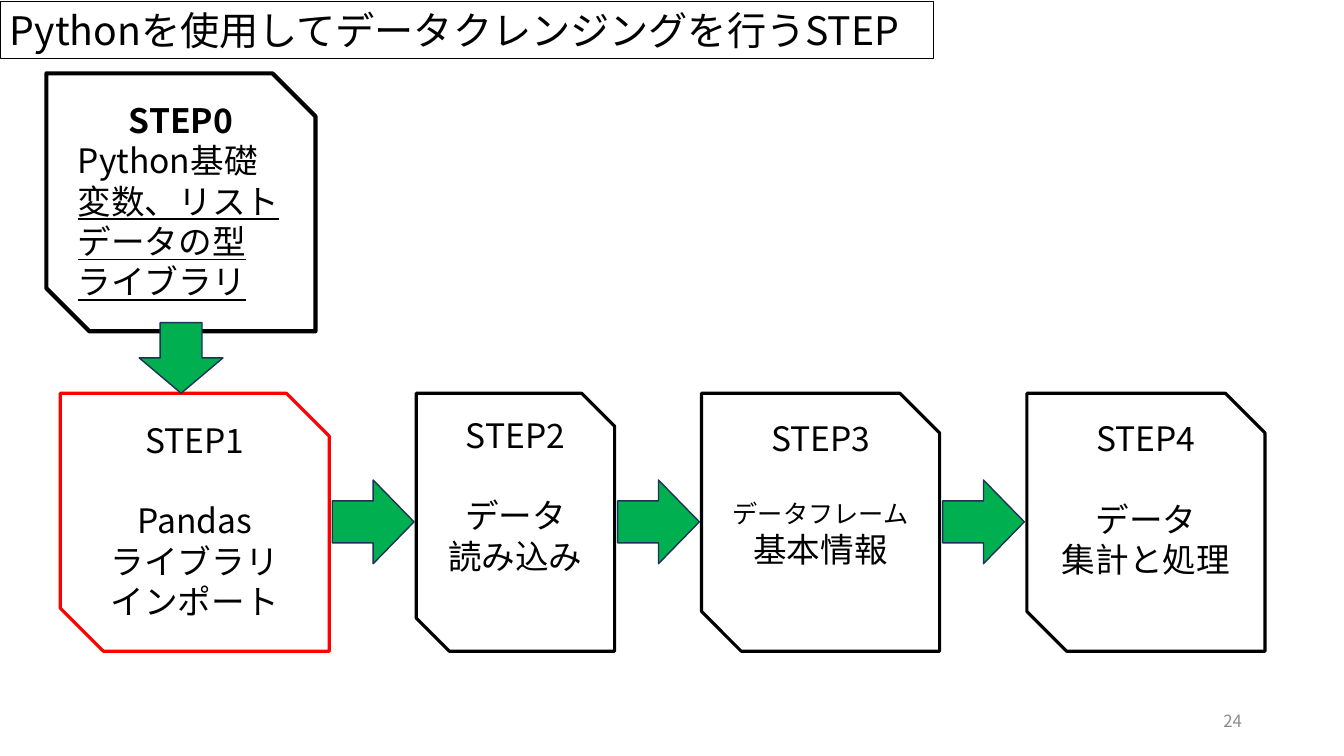
from lxml import etree
from pptx import Presentation
from pptx import util as u
from pptx.dml import color
from pptx.enum import shapes, text
from pptx.oxml import ns

ALIGN = text.PP_ALIGN
SHAPE = shapes.MSO_SHAPE


def rgb(value):
    return color.RGBColor.from_string(value)


def write(p, content, size=24, fill="000000", bold=False, underline=False, font="Noto Sans CJK JP"):
    r = p.add_run()
    r.text = content
    f = r.font
    f.name, f.size, f.bold, f.underline = font, u.Pt(size), bold, underline
    f.color.rgb = rgb(fill)
    ea = etree.SubElement(r._r.get_or_add_rPr(), ns.qn("a:ea"))
    ea.set("typeface", font)


class Deck:
    green, edge, grey = "00B050", "1E3256", "8C8C8C"

    def __init__(self):
        self.prs = Presentation()
        self.prs.slide_width = u.Cm(33.87)
        self.prs.slide_height = u.Cm(19.05)
        self.s = self.prs.slides.add_slide(self.prs.slide_layouts[6])

    def shape(self, kind, x, y, w, h, fill="FFFFFF", line="000000", weight=2.25):
        sp = self.s.shapes.add_shape(kind, u.Cm(x), u.Cm(y), u.Cm(w), u.Cm(h))
        sp.shadow.inherit = False
        sp.fill.solid()
        sp.fill.fore_color.rgb = rgb(fill)
        sp.line.color.rgb = rgb(line)
        sp.line.width = u.Pt(weight)
        tf = sp.text_frame
        tf.word_wrap = True
        tf.vertical_anchor = text.MSO_ANCHOR.TOP
        return sp

    def title(self, content):
        sp = self.shape(SHAPE.RECTANGLE, 0, 0.03, 23.52, 1.45, weight=0.5)
        p = sp.text_frame.paragraphs[0]
        p.alignment = ALIGN.JUSTIFY
        write(p, content, size=28)

    def page_number(self, content):
        sp = self.s.shapes.add_textbox(u.Cm(23.93), u.Cm(17.65), u.Cm(7.62), u.Cm(1.02))
        tf = sp.text_frame
        tf.word_wrap = True
        tf.vertical_anchor = text.MSO_ANCHOR.MIDDLE
        p = tf.paragraphs[0]
        p.alignment = ALIGN.RIGHT
        write(p, content, size=12, fill=self.grey)

    def card(self, x, y, w, heading, lines, gap=28.8, align=ALIGN.CENTER, bold=False, **style):
        sp = self.shape(SHAPE.SNIP_2_DIAG_RECTANGLE, x, y, w, 6.5, **style)
        tf = sp.text_frame
        p = tf.paragraphs[0]
        p.alignment = ALIGN.CENTER
        write(p, heading, bold=bold)
        for i, runs in enumerate(lines):
            p = tf.add_paragraph()
            p.alignment = align
            if i == 0:
                p.space_before = u.Pt(gap)
            for content, fmt in runs:
                write(p, content, **fmt)

    def arrow(self, x, y, h, rotation=0):
        sp = self.shape(SHAPE.DOWN_ARROW, x, y, 2.11, h, self.green, self.edge, 1)
        sp.rotation = rotation


def main():
    d = Deck()
    d.title("Pythonを使用してデータクレンジングを行うSTEP")
    d.page_number("24")

    row_y = 9.91
    steps = [
        (1.52, 6.78, "FF0000", [[("Pandas", {})], [("ライブラリ", {})], [("インポート", {})]]),
        (10.49, 5, "000000", [[("データ", {})], [("読み込み", {})]]),
        (17.68, 6, "000000", [[("データフレーム", {"size": 18}), ("基本情報", {})]]),
        (25.88, 6, "000000", [[("データ", {})], [("集計と処理", {})]]),
    ]
    for n, (x, w, line, lines) in enumerate(steps, 1):
        d.card(x, row_y, w, f"STEP{n}", lines, line=line)
    for x, w, *_ in steps[:-1]:
        d.arrow(x + w + 0.05, 12.12, 2.06, rotation=270)

    topics = ["変数、リスト", "データの型", "ライブラリ"]
    basics = [[("Python基礎", {})]] + [[(t, {"underline": True})] for t in topics]
    d.card(1.17, 1.85, 6.78, "STEP0", basics, gap=0, align=ALIGN.JUSTIFY, bold=True, weight=3)
    d.arrow(3.51, 8.13, 1.78)

    d.prs.save("out.pptx")


if __name__ == "__main__":
    main()
